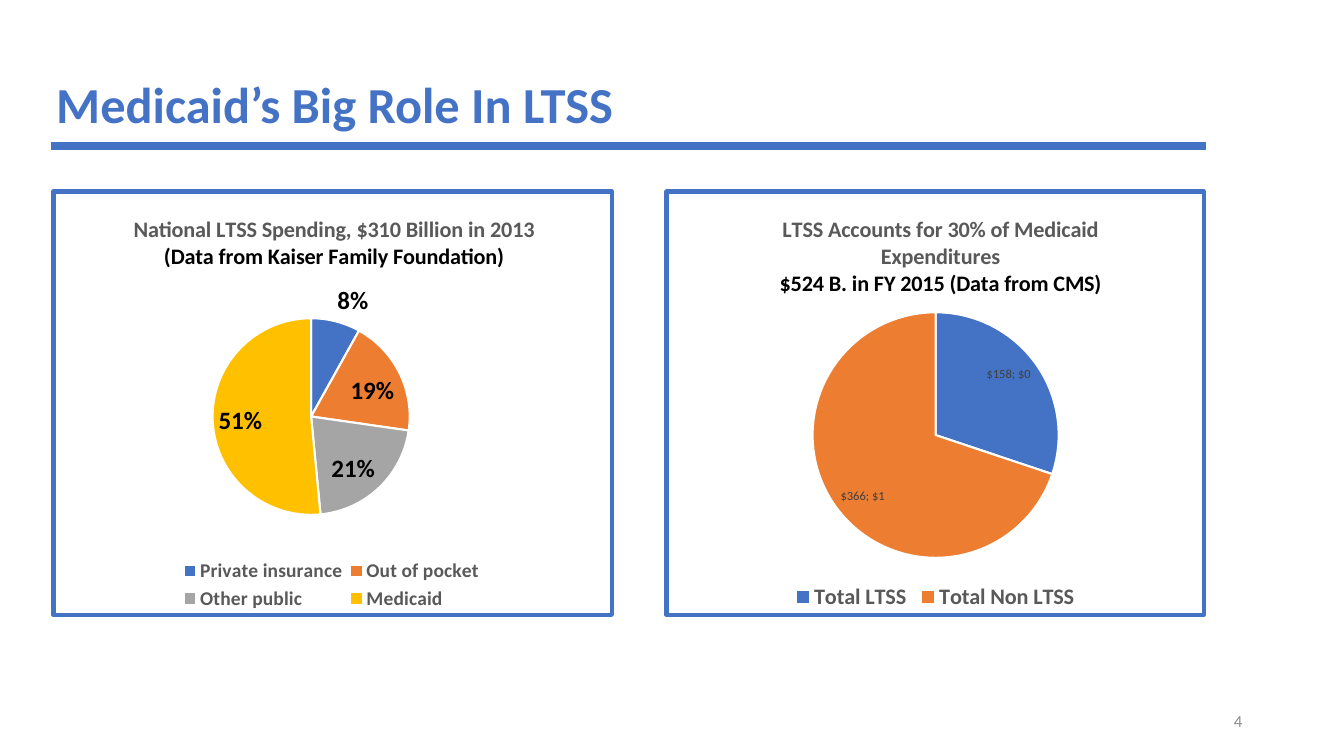
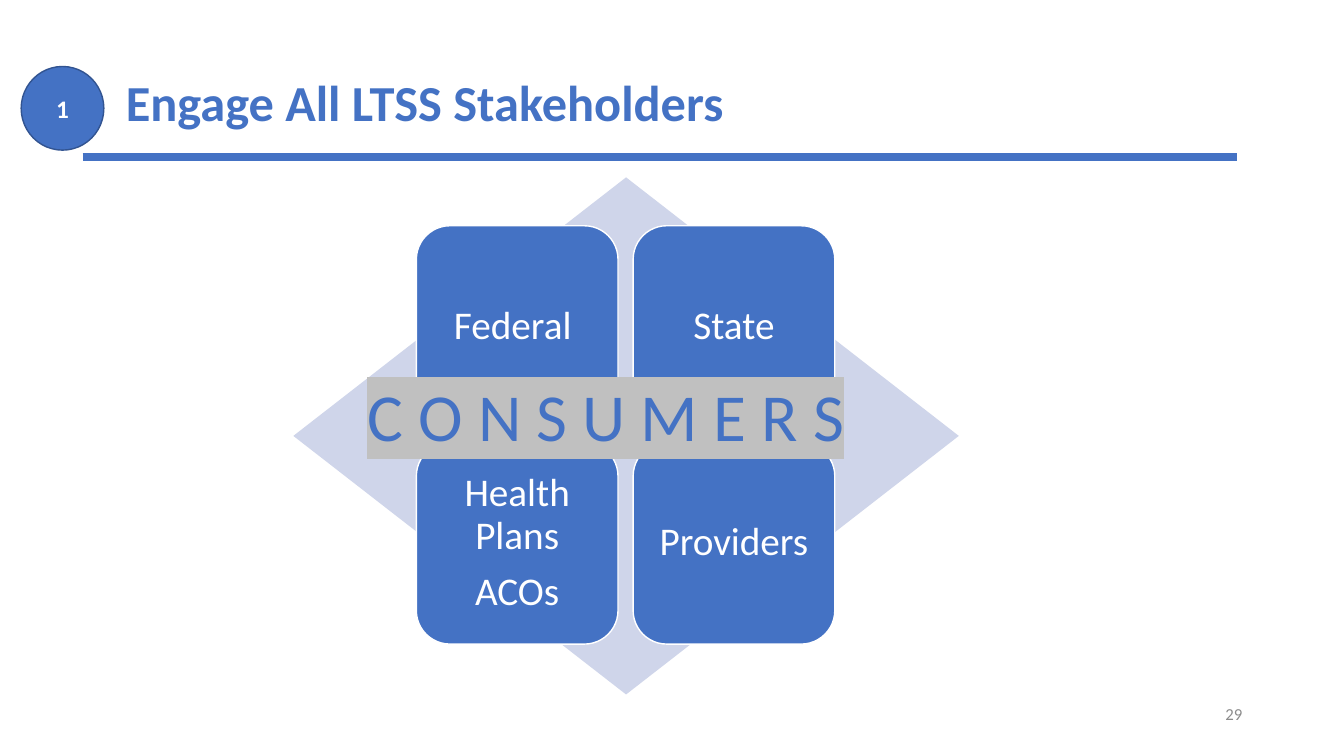
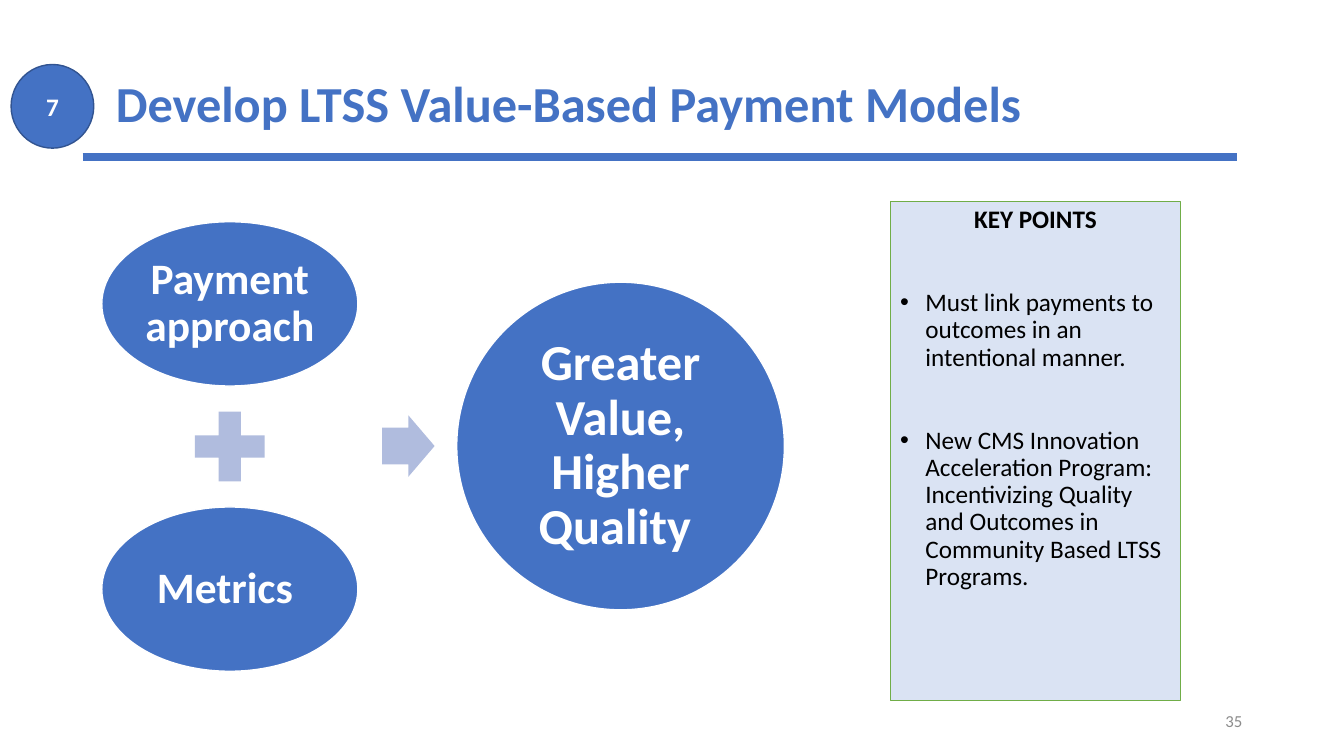
from lxml import etree
from pptx import Presentation
from pptx.chart.data import CategoryChartData
from pptx.dml.color import RGBColor
from pptx.enum.chart import XL_CHART_TYPE, XL_LABEL_POSITION, XL_LEGEND_POSITION
from pptx.enum.shapes import MSO_CONNECTOR, MSO_SHAPE
from pptx.enum.text import MSO_ANCHOR, PP_ALIGN
from pptx.oxml import parse_xml
from pptx.oxml.ns import nsdecls, qn
from pptx.util import Pt

PIE = XL_CHART_TYPE.PIE
INSIDE, OUTSIDE = XL_LABEL_POSITION.INSIDE_END, XL_LABEL_POSITION.OUTSIDE_END
LEGEND_BOTTOM = XL_LEGEND_POSITION.BOTTOM
STRAIGHT = MSO_CONNECTOR.STRAIGHT
ELLIPSE, RECT, ROUNDED = MSO_SHAPE.OVAL, MSO_SHAPE.RECTANGLE, MSO_SHAPE.ROUNDED_RECTANGLE
DIAMOND, PLUS, ARROW = MSO_SHAPE.DIAMOND, MSO_SHAPE.MATH_PLUS, MSO_SHAPE.RIGHT_ARROW
TOP, MIDDLE = MSO_ANCHOR.TOP, MSO_ANCHOR.MIDDLE
LEFT, CENTER, RIGHT = PP_ALIGN.LEFT, PP_ALIGN.CENTER, PP_ALIGN.RIGHT

EMU_PER_PX = 9144  # 100 px to the inch
FONT = "Calibri"
COLORS = {
    "blue": "4472C4", "orange": "ED7D31", "gray": "A5A5A5", "gold": "FFC000",
    "navy": "325491", "pale": "CFD5EA", "soft": "B0BCDE", "panel": "DAE3F3",
    "green": "70AD47", "white": "FFFFFF", "black": "000000", "silver": "C0C0C0",
    "legend": "595959", "label": "404040", "number": "8C8C8C",
}
SLICES = ["blue", "orange", "gray", "gold"]

# title, title box, rule start, page number, number top, badge text, badge corner
FRAMES = [
    ("Medicaid’s Big Role In LTSS", (46, 34, 1150, 145), (51, 145), "4", 695, None, None),
    ("Engage All LTSS Stakeholders", (115, 69, 1150, 71), (82, 156), "29", 688, "1", (21, 66)),
    ("Develop LTSS Value-Based Payment Models", (105, 33, 1150, 145), (82, 156), "35", 695,
     "7", (11, 64)),
]

# title, pie and legend boxes are measured from the chart's corner
CHARTS = [
    {
        "box": (51, 188, 558, 424),
        "title": ["National LTSS Spending, $310 Billion in 2013",
                  "(Data from Kaiser Family Foundation)"],
        "title_at": (77, 20), "pie_at": (159, 127, 197, 197), "legend_at": (123, 364, 310, 60),
        "data": [("Private insurance", 0.08), ("Out of pocket", 0.19),
                 ("Other public", 0.21), ("Medicaid", 0.51)],
        "format": "0%", "percent": False, "outside": [0],
        "label": (18, "black", True), "legend_size": 14,
    },
    {
        "box": (659, 188, 537, 424),
        "title": ["LTSS Accounts for 30% of Medicaid Expenditures",
                  "$524 B. in FY 2015 (Data from CMS)"],
        "title_at": (110, 20), "pie_at": (146, 121, 246, 246), "legend_at": None,
        "data": [("Total LTSS", 158), ("Total Non LTSS", 366)],
        "format": '"$"#,##0', "percent": True, "outside": [],
        "label": (9, "label", False), "legend_size": 16,
    },
]

STAKEHOLDERS = [["Federal "], ["State"], ["Health Plans", "ACOs"], ["Providers"]]
TILE_ORIGIN, TILE_SIZE, TILE_STEP = (413, 224), 200, 215

# text, box, size, inset
EQUATION = [
    ("Payment approach", (101, 220, 254, 163), 31, 4),
    ("Metrics ", (101, 503, 254, 163), 31, 4),
    ("Greater Value, Higher Quality ", (453, 280, 325, 325), 36, 5),
]
KEY_POINTS = [
    "Must link payments to outcomes in an intentional manner.",
    "New CMS Innovation Acceleration Program: Incentivizing Quality and Outcomes in "
    "Community Based LTSS Programs.",
]


def px(*lengths):
    return [round(length * EMU_PER_PX) for length in lengths]


def rgb(name):
    return RGBColor.from_string(COLORS[name])


def style_font(font, size, color, bold=False):
    font.name, font.size, font.bold = FONT, Pt(size), bold
    font.color.rgb = rgb(color)


def write(shape, lines, size, color, bold=False, align=LEFT, anchor=MIDDLE,
          inset=None, spacing=None, gap=0):
    """Fill a shape with paragraphs; gap is the space in points between them."""
    frame = shape.text_frame
    frame.word_wrap = True
    frame.vertical_anchor = anchor
    if inset is not None:
        frame.margin_left = frame.margin_right = px(inset)[0]
        frame.margin_top = frame.margin_bottom = px(inset)[0]
    frame.text = "\n".join(lines)
    for index, paragraph in enumerate(frame.paragraphs):
        paragraph.alignment = align
        if spacing:
            paragraph.line_spacing = spacing
        if index:
            paragraph.space_before = Pt(gap)
        for run in paragraph.runs:
            style_font(run.font, size, color, bold)
    return frame


def add_text(slide, box, lines, size, color, **options):
    return write(slide.shapes.add_textbox(*px(*box)), lines, size, color, **options)


def add_shape(slide, kind, box, fill, line=None, width=1):
    shape = slide.shapes.add_shape(kind, *px(*box))
    shape.shadow.inherit = False
    shape.fill.solid()
    shape.fill.fore_color.rgb = rgb(fill)
    if line:
        shape.line.color.rgb = rgb(line)
        shape.line.width = Pt(width)
    else:
        shape.line.fill.background()
    return shape


def add_frame(prs, title, title_box, rule_start, number, number_top, badge, badge_corner):
    """Add a blank slide with the shared title, rule, page number and optional badge."""
    slide = prs.slides.add_slide(prs.slide_layouts[6])
    add_text(slide, title_box, [title], 36, "blue", bold=True, spacing=0.9)
    add_text(slide, (942, number_top, 300, 40), [number], 12, "number", align=RIGHT)
    left, top = rule_start
    rule = slide.shapes.add_connector(STRAIGHT, *px(left, top, left + 1145, top))
    rule.line.color.rgb = rgb("blue")
    rule.line.width = Pt(6)
    etree.SubElement(rule._element.spPr, qn("a:effectLst"))
    if badge:
        circle = add_shape(slide, ELLIPSE, (*badge_corner, 82, 83), "blue", "navy")
        write(circle, [badge], 18, "white", bold=True, align=CENTER)
    return slide


def set_layout(element, index, box, chart_size, inner=False):
    """Place a chart part by hand, as fractions of the chart size."""
    for old in element.findall(qn("c:layout")):
        element.remove(old)
    keys = "xywh"[:len(box)]
    target = '<c:layoutTarget val="inner"/>' if inner else ""
    modes = "".join(f'<c:{key}Mode val="edge"/>' for key in keys if key in "xy")
    places = "".join(f'<c:{key} val="{length / chart_size[i % 2]:.4f}"/>'
                     for i, (key, length) in enumerate(zip(keys, box)))
    element.insert(index, parse_xml(
        f'<c:layout {nsdecls("c")}><c:manualLayout>{target}{modes}{places}'
        '</c:manualLayout></c:layout>'))


def add_pie(slide, content):
    data = CategoryChartData(number_format=content["format"])
    names, values = zip(*content["data"])
    data.categories = names
    data.add_series("Series 1", values)
    chart = slide.shapes.add_chart(PIE, *px(*content["box"]), data).chart
    style_font(chart.font, 10, "black")
    size = content["box"][2:]
    space = chart._chartSpace

    chart.has_title = True
    title = chart.chart_title.text_frame
    title.text = "\n".join(content["title"])
    for paragraph, color in zip(title.paragraphs, ("legend", "black")):
        paragraph.alignment = CENTER
        style_font(paragraph.runs[0].font, 16, color, True)
    set_layout(chart.chart_title._element, 1, content["title_at"], size)

    chart.has_legend = True
    chart.legend.position = LEGEND_BOTTOM
    chart.legend.include_in_layout = False
    style_font(chart.legend.font, content["legend_size"], "legend", True)
    if content["legend_at"]:
        set_layout(chart.legend._element, 1, content["legend_at"], size)

    plot = chart.plots[0]
    plot.vary_by_categories = True
    set_layout(space.chart.plotArea, 0, content["pie_at"], size, inner=True)
    series = plot.series[0]
    for index, color in enumerate(SLICES[:len(values)]):
        part = series.points[index].format
        part.fill.solid()
        part.fill.fore_color.rgb = rgb(color)
        part.line.color.rgb = rgb("white")
        part.line.width = Pt(1.5)

    labels = series.data_labels
    labels.show_value = True
    labels.show_percentage = content["percent"]
    labels.number_format = content["format"]
    labels.number_format_is_linked = False
    labels.position = INSIDE
    style_font(labels.font, *content["label"])
    if content["percent"]:
        labels._element.find(qn("c:showBubbleSize")).addnext(
            parse_xml(f'<c:separator {nsdecls("c")}>; </c:separator>'))
    for index in content["outside"]:
        label = series.points[index].data_label
        style_font(label.font, *content["label"])
        label.position = OUTSIDE

    if space.find(qn("c:roundedCorners")) is None:
        space.chart.addprevious(parse_xml(f'<c:roundedCorners {nsdecls("c")} val="0"/>'))
    space.chart.addnext(parse_xml(
        f'<c:spPr {nsdecls("c", "a")}><a:noFill/><a:ln w="{Pt(3)}"><a:solidFill>'
        f'<a:srgbClr val="{COLORS["blue"]}"/></a:solidFill></a:ln></c:spPr>'))


def add_stakeholders(slide):
    add_shape(slide, DIAMOND, (291, 176, 660, 513), "pale")
    for index, lines in enumerate(STAKEHOLDERS):
        row, column = divmod(index, 2)
        box = (TILE_ORIGIN[0] + column * TILE_STEP, TILE_ORIGIN[1] + row * TILE_STEP,
               TILE_SIZE, TILE_SIZE)
        tile = add_shape(slide, ROUNDED, box, "blue", "white")
        write(tile, lines, 28, "white", align=CENTER, inset=12, spacing=0.9, gap=10)
    banner = add_text(slide, (189, 366, 824, 91), ["C O N S U M E R S"], 48, "blue",
                      align=CENTER, anchor=TOP)
    run = banner.paragraphs[0].runs[0]
    run.font._element.find(qn("a:solidFill")).addnext(parse_xml(
        f'<a:highlight {nsdecls("a")}><a:srgbClr val="{COLORS["silver"]}"/></a:highlight>'))


def add_equation(slide):
    for text, box, size, inset in EQUATION:
        oval = add_shape(slide, ELLIPSE, box, "blue", "white")
        write(oval, [text], size, "white", bold=True, align=CENTER, inset=inset, spacing=0.9)
    add_shape(slide, PLUS, (181, 396, 94, 94), "soft")
    arrow = add_shape(slide, ARROW, (379, 412, 52, 61), "soft")
    arrow.adjustments[0] = 0.6


def add_key_points(slide):
    panel = add_shape(slide, RECT, (883, 200, 288, 495), "panel", "green", 0.75)
    frame = write(panel, ["KEY POINTS", *KEY_POINTS], 18, "black", anchor=TOP,
                  spacing=0.9, gap=40)
    heading, *points = frame.paragraphs
    heading.alignment = CENTER
    heading.runs[0].font.bold = True
    indent = px(25)[0]
    for point in points:
        properties = point._p.get_or_add_pPr()
        properties.set("marL", str(indent))
        properties.set("indent", str(-indent))
        properties.append(parse_xml(f'<a:buFont {nsdecls("a")} typeface="Arial"/>'))
        properties.append(parse_xml(f'<a:buChar {nsdecls("a")} char="•"/>'))


def main():
    prs = Presentation()
    prs.slide_width, prs.slide_height = px(1333, 750)
    spending, stakeholders, payment = [add_frame(prs, *frame) for frame in FRAMES]
    for content in CHARTS:
        add_pie(spending, content)
    add_stakeholders(stakeholders)
    add_equation(payment)
    add_key_points(payment)
    prs.save("out.pptx")


if __name__ == "__main__":
    main()
